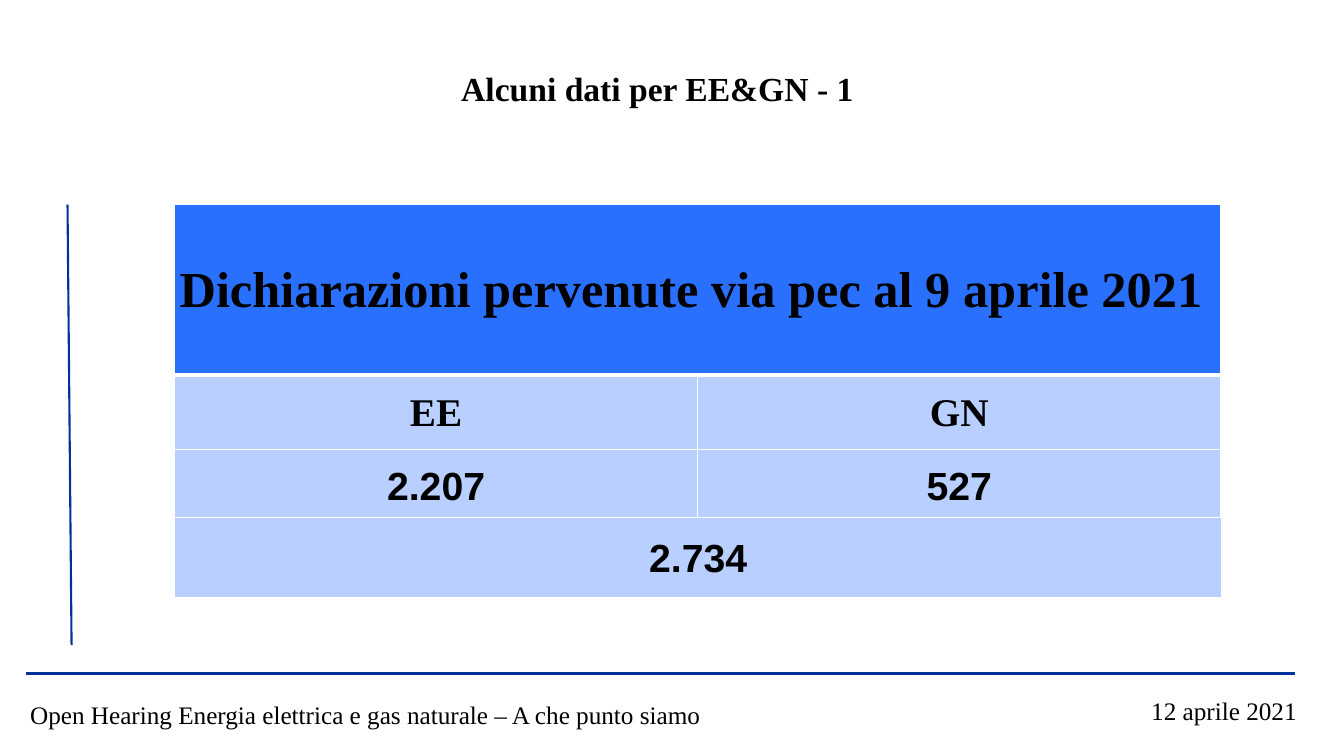
"""Build a slide with a table of declarations received for EE and GN."""
from dataclasses import dataclass

from lxml import etree
from pptx import Presentation
from pptx.dml.color import RGBColor
from pptx.enum.shapes import MSO_CONNECTOR
from pptx.enum.text import MSO_ANCHOR, MSO_AUTO_SIZE, PP_ALIGN
from pptx.oxml.ns import qn
from pptx.slide import Slide
from pptx.table import _Cell
from pptx.text.text import TextFrame
from pptx.util import Inches, Pt

LEFT, CENTER = PP_ALIGN.LEFT, PP_ALIGN.CENTER
MIDDLE = MSO_ANCHOR.MIDDLE
GROW = MSO_AUTO_SIZE.SHAPE_TO_FIT_TEXT
STRAIGHT = MSO_CONNECTOR.STRAIGHT


@dataclass(frozen=True)
class Theme:
    ink: str = "000000"
    rule: str = "003399"
    head: str = "2970FF"
    body: str = "B8CFFF"
    edge: str = "FFFFFF"
    serif: str = "Times New Roman"
    sans: str = "Arial"
    note: int = 18
    title: int = 24
    value: int = 28
    banner: int = 36


THEME = Theme()


@dataclass(frozen=True)
class Label:
    text: str
    box: tuple[float, float, float, float]
    size: int = THEME.note
    bold: bool = False
    align: PP_ALIGN = LEFT


@dataclass(frozen=True)
class Rule:
    start: tuple[float, float]
    end: tuple[float, float]
    width: float


@dataclass(frozen=True)
class Row:
    texts: tuple[str, ...]
    height: float
    font: str = THEME.sans
    size: int = THEME.value
    fill: str = THEME.body
    base: int = 1


@dataclass(frozen=True)
class Grid:
    left: float
    top: float
    width: float
    cols: int
    rows: tuple[Row, ...]


LABELS = (
    Label("Alcuni dati per EE&GN - 1", (1.73, 0.62, 9.58, 0.5),
          THEME.title, True, CENTER),
    Label("Open Hearing Energia elettrica e gas naturale – A che punto siamo",
          (0.2, 6.89, 7.61, 0.4)),
    Label("12 aprile 2021", (11.32, 6.85, 1.7, 0.4)),
)
RULES = (
    Rule((0.26, 6.68), (12.84, 6.68), 2.25),
    Rule((0.67, 2.03), (0.71, 6.4), 1.5),
)
GRIDS = (
    Grid(1.73, 2.03, 10.38, 2, (
        Row(("Dichiarazioni pervenute via pec al 9 aprile 2021 ",), 1.69,
            THEME.serif, THEME.banner, THEME.head, 3),
        Row(("EE", "GN"), 0.74, THEME.serif),
        Row(("2.207", "527"), 0.74),
    )),
    Grid(1.73, 5.13, 10.39, 1, (Row(("2.734",), 0.81, base=3),)),
)


def write(frame: TextFrame, text: str, *, size: int, font: str = THEME.serif,
          bold: bool = False, align: PP_ALIGN = LEFT) -> None:
    """Put one formatted line of text in a frame."""
    line = frame.paragraphs[0]
    line.alignment = align
    run = line.add_run()
    run.text = text
    run.font.name = font
    run.font.size = Pt(size)
    run.font.bold = bold
    run.font.color.rgb = RGBColor.from_string(THEME.ink)


def add_label(slide: Slide, label: Label) -> None:
    """Add a text box."""
    frame = slide.shapes.add_textbox(*map(Inches, label.box)).text_frame
    frame.word_wrap = True
    frame.auto_size = GROW
    write(frame, label.text, size=label.size, bold=label.bold, align=label.align)


def add_rule(slide: Slide, rule: Rule) -> None:
    """Add a plain line."""
    line = slide.shapes.add_connector(
        STRAIGHT, *map(Inches, rule.start + rule.end))
    line.line.color.rgb = RGBColor.from_string(THEME.rule)
    line.line.width = Pt(rule.width)
    etree.SubElement(line._element.spPr, qn("a:effectLst"))


def paint(cell: _Cell, row: Row) -> None:
    """Set the fill, margins and borders of a cell."""
    cell.fill.solid()
    cell.fill.fore_color.rgb = RGBColor.from_string(row.fill)
    cell.vertical_anchor = MIDDLE
    cell.margin_left = cell.margin_right = cell.margin_top = Inches(0.01)
    cell.margin_bottom = 0
    props = cell._tc.get_or_add_tcPr()
    for spot, (side, width) in enumerate(
            (("L", 1), ("R", 1), ("T", 1), ("B", row.base))):
        edge = etree.Element(qn(f"a:ln{side}"), w=str(Pt(width)))
        fill = etree.SubElement(edge, qn("a:solidFill"))
        etree.SubElement(fill, qn("a:srgbClr"), val=THEME.edge)
        props.insert(spot, edge)


def add_grid(slide: Slide, grid: Grid) -> None:
    """Add a table, merging any row that holds a single text."""
    height = sum(row.height for row in grid.rows)
    table = slide.shapes.add_table(
        len(grid.rows), grid.cols,
        *map(Inches, (grid.left, grid.top, grid.width, height))).table
    for col in table.columns:
        col.width = Inches(grid.width / grid.cols)
    for at, row in enumerate(grid.rows):
        table.rows[at].height = Inches(row.height)
        for cell in table.rows[at].cells:
            paint(cell, row)
        if len(row.texts) < grid.cols:
            table.cell(at, 0).merge(table.cell(at, grid.cols - 1))
        for col, text in enumerate(row.texts):
            write(table.cell(at, col).text_frame, text, size=row.size,
                  font=row.font, bold=True, align=CENTER)


def main() -> None:
    """Build and save the slide."""
    deck = Presentation()
    deck.slide_width, deck.slide_height = Inches(13.33), Inches(7.5)
    slide = deck.slides.add_slide(deck.slide_layouts[6])
    for rule in RULES:
        add_rule(slide, rule)
    for label in LABELS:
        add_label(slide, label)
    for grid in GRIDS:
        add_grid(slide, grid)
    deck.save("out.pptx")


if __name__ == "__main__":
    main()
